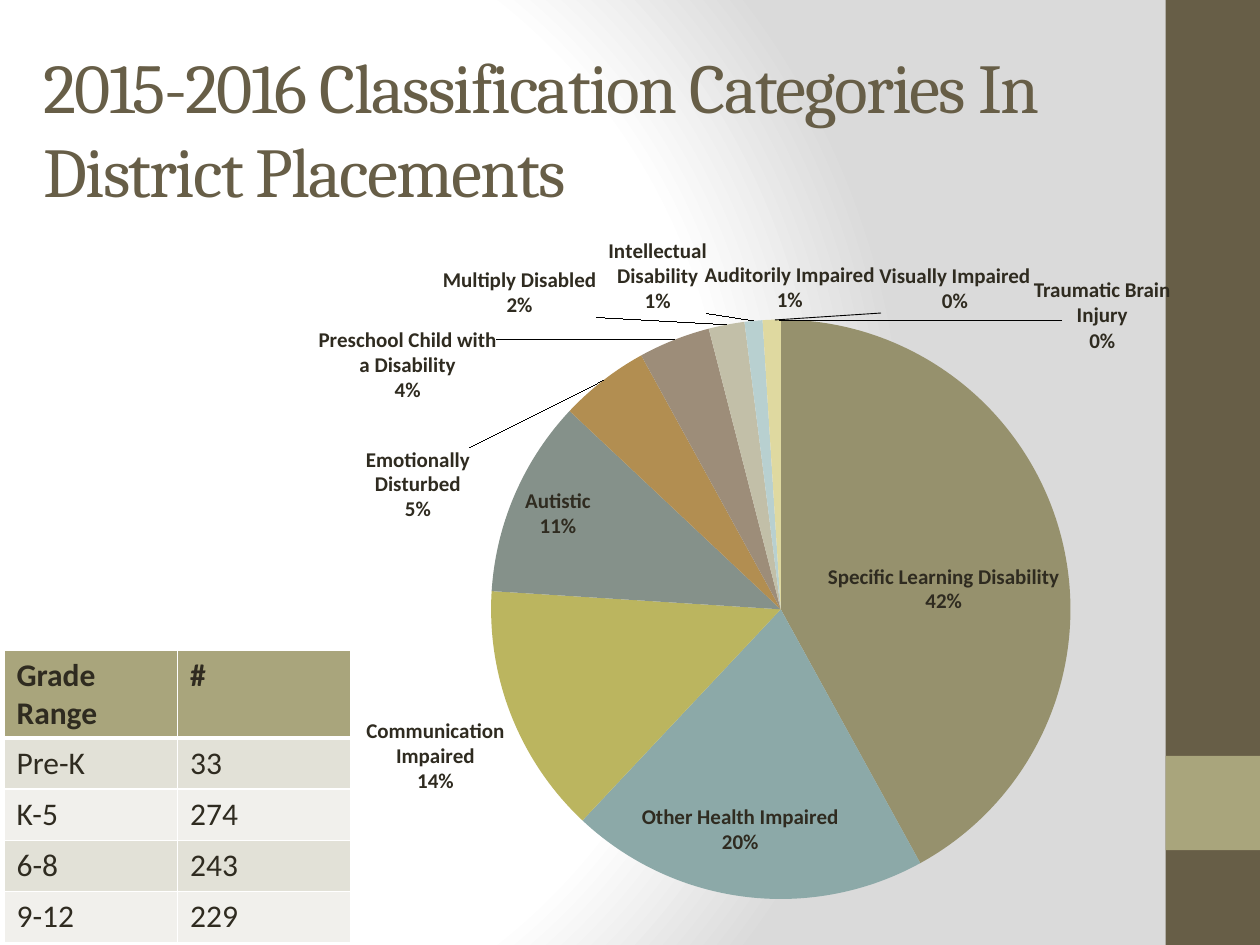
from pptx import Presentation
from pptx.chart.data import CategoryChartData
from pptx.dml.color import RGBColor
from pptx.enum.chart import XL_CHART_TYPE as ChartType
from pptx.enum.shapes import MSO_CONNECTOR as Connector, MSO_SHAPE as Shape
from pptx.enum.text import MSO_ANCHOR as Anchor, PP_ALIGN as Align
from pptx.oxml import parse_xml
from pptx.oxml.ns import nsdecls, qn
from pptx.util import Cm, Pt

BROWN = RGBColor(0x67, 0x5E, 0x47)
SAGE = RGBColor(0xA9, 0xA5, 0x7C)
INK = RGBColor(0x2F, 0x2B, 0x20)
BLACK = RGBColor(0, 0, 0)
BAND_DARK = RGBColor(0xE2, 0xE1, 0xD7)
BAND_LIGHT = RGBColor(0xF1, 0xF0, 0xEC)
SLICE_COLOURS = [RGBColor.from_string(code) for code in (
    "96916D", "8CA9A8", "BBB55F", "85918A", "B28E51", "9D8D79",
    "C2BFA8", "B8D0D0", "DFD9A0", "B4BEBA", "D8BE96")]

# category, percent, label shift as a share of the chart
CLASSIFICATIONS = [
    ("Specific Learning Disability", 42, None),
    ("Other Health Impaired", 20, None),
    ("Communication Impaired", 14, None),
    ("Autistic", 11, None),
    ("Emotionally Disturbed", 5, (-0.14, 0.19)),
    ("Preschool Child with a Disability", 4, (-0.19, 0.09)),
    ("Multiply Disabled", 2, (-0.14, 0)),
    ("Intellectual Disability", 1, (-0.05, 0)),
    ("Auditorily Impaired", 1, (0.02, 0)),
    ("Visually Impaired", 0, None),
    ("Traumatic Brain Injury", 0, None),
]
NARROW_LABEL = "Preschool Child with a Disability"
# Slices of no width get no chart label: left, top, width, height, leader from and to
EMPTY_SLICE_LABELS = {
    "Visually Impaired": (17.6, 5.28, 3.3, 1.02, (17.76, 6.31), (15.62, 6.45)),
    "Traumatic Brain Injury": (20.77, 5.58, 2.9, 1.52, (21.41, 6.46), (15.7, 6.46)),
}
GRADES = [("Grade Range", "#"), ("Pre-K", "33"), ("K-5", "274"),
          ("6-8", "243"), ("9-12", "229")]


def style_font(font, **values):
    font.color.rgb = values.pop("color")
    for name, value in values.items():
        setattr(font, name, value)


prs = Presentation()
prs.slide_width, prs.slide_height = Cm(25.4), Cm(19.05)
slide = prs.slides.add_slide(prs.slide_layouts[6])

# Background
slide.background.fill.gradient()
gradient = slide.background._cSld.find(".//" + qn("a:gradFill"))
stops = "".join(
    f'<a:gs pos="{pos}"><a:srgbClr val="{colour}"/></a:gs>'
    for pos, colour in ((0, "FFFFFF"), (75000, "FFFFFF"), (100000, "DADADA")))
gradient.getparent().replace(gradient, parse_xml(
    f'<a:gradFill {nsdecls("a")} rotWithShape="1"><a:gsLst>{stops}</a:gsLst>'
    '<a:path path="circle"><a:fillToRect l="20000" t="50000" r="100000" b="50000"/>'
    '</a:path></a:gradFill>'))

# Side band
for top, height, colour in ((0, 19.05, BROWN), (15.24, 1.9, SAGE)):
    band = slide.shapes.add_shape(Shape.RECTANGLE, Cm(23.5), Cm(top), Cm(1.9), Cm(height))
    band.shadow.inherit = False
    band.fill.solid()
    band.fill.fore_color.rgb = colour
    band.line.fill.background()

# Title
title = slide.shapes.add_textbox(Cm(0.63), Cm(0.76), Cm(22.02), Cm(2.54)).text_frame
title.word_wrap = True
title.vertical_anchor = Anchor.TOP
heading = title.paragraphs[0].add_run()
heading.text = "2015-2016 Classification Categories In District Placements"
style_font(heading.font, name="Cambria", size=Pt(40), color=BROWN)
heading.font._element.set("spc", "-100")

# Grade table
grade_table = slide.shapes.add_table(
    len(GRADES), 2, Cm(0.08), Cm(13.1), Cm(7), Cm(5.89)).table
for column in grade_table.columns:
    column.width = Cm(3.5)
for row_no, entries in enumerate(GRADES):
    is_header = row_no == 0
    grade_table.rows[row_no].height = Cm(1.77 if is_header else 1.03)
    for col_no, entry in enumerate(entries):
        cell = grade_table.cell(row_no, col_no)
        cell.fill.solid()
        cell.fill.fore_color.rgb = (
            SAGE if is_header else BAND_DARK if row_no % 2 else BAND_LIGHT)
        run = cell.text_frame.paragraphs[0].add_run()
        run.text = entry
        style_font(run.font, name="Calibri", size=Pt(18), bold=is_header, color=INK)
        for index, side in enumerate(("lnL", "lnR", "lnT", "lnB")):
            thick = (is_header and side == "lnB") or (row_no == 1 and side == "lnT")
            cell._tc.get_or_add_tcPr().insert(index, parse_xml(
                f'<a:{side} {nsdecls("a")} w="{Pt(3 if thick else 1)}"><a:solidFill>'
                f'<a:srgbClr val="FFFFFF"/></a:solidFill></a:{side}>'))

# Pie chart
pie_data = CategoryChartData(number_format="0")
pie_data.categories = [name for name, *_ in CLASSIFICATIONS]
pie_data.add_series("Series 1", [percent for _, percent, _ in CLASSIFICATIONS])
chart = slide.shapes.add_chart(
    ChartType.PIE, Cm(5.08), Cm(4.45), Cm(18.54), Cm(15.67), pie_data).chart
chart.has_legend = False
chart.has_title = False
style_font(chart.font, name="Calibri", size=Pt(12), bold=True, color=INK)
pie = chart.plots[0]
pie.vary_by_categories = True
shares = pie.series[0]
for index, colour in enumerate(SLICE_COLOURS):
    slice_format = shares.points[index].format
    slice_format.fill.solid()
    slice_format.fill.fore_color.rgb = colour
    slice_format.line.fill.background()

plot_area = chart._chartSpace.find(".//" + qn("c:plotArea"))
for old_layout in plot_area.findall(qn("c:layout")):
    plot_area.remove(old_layout)
plot_area.insert(0, parse_xml(
    f'<c:layout {nsdecls("c")}><c:manualLayout><c:layoutTarget val="inner"/>'
    '<c:xMode val="edge"/><c:yMode val="edge"/><c:x val="0.26"/><c:y val="0.12"/>'
    '<c:w val="0.63"/><c:h val="0.76"/></c:manualLayout></c:layout>'))

# Slice labels
number_format = '<c:numFmt formatCode="0%" sourceLinked="0"/><c:spPr><a:noFill/></c:spPr>'
label_font = (
    f'<c:txPr><a:bodyPr/><a:p><a:pPr><a:defRPr sz="1200" b="1"><a:solidFill>'
    f'<a:srgbClr val="{INK}"/></a:solidFill><a:latin typeface="Calibri"/>'
    '</a:defRPr></a:pPr><a:endParaRPr lang="en-US"/></a:p></c:txPr>')
shown = "".join(f'<c:{flag} val="{value}"/>' for flag, value in (
    ("showLegendKey", 0), ("showVal", 0), ("showCatName", 1),
    ("showSerName", 0), ("showPercent", 1), ("showBubbleSize", 0)))
separator = "<c:separator>\n</c:separator>"
label_size = (
    '<c:extLst><c:ext uri="{CE6537A1-D6FC-4f65-9D91-7224C49458BB}" '
    'xmlns:c15="http://schemas.microsoft.com/office/drawing/2012/chart"><c15:layout>'
    '<c:manualLayout><c:w val="0.16"/><c:h val="0.1"/></c:manualLayout>'
    '</c15:layout></c:ext></c:extLst>')
slice_labels = ""
for index, (category, _, shift) in enumerate(CLASSIFICATIONS):
    if category in EMPTY_SLICE_LABELS:
        slice_labels += f'<c:dLbl><c:idx val="{index}"/><c:delete val="1"/></c:dLbl>'
        continue
    layout = "" if shift is None else (
        f'<c:layout><c:manualLayout><c:x val="{shift[0]}"/><c:y val="{shift[1]}"/>'
        '</c:manualLayout></c:layout>')
    position = "outEnd" if shift else "bestFit"
    slice_labels += (
        f'<c:dLbl><c:idx val="{index}"/>{layout}{number_format}{label_font}'
        f'<c:dLblPos val="{position}"/>{shown}{separator}'
        f'{label_size if category == NARROW_LABEL else ""}</c:dLbl>')
shares._element.find(qn("c:cat")).addprevious(parse_xml(
    f'<c:dLbls {nsdecls("c", "a")}>{slice_labels}{number_format}{label_font}'
    f'<c:dLblPos val="bestFit"/>{shown}{separator}<c:showLeaderLines val="1"/></c:dLbls>'))

# Labels and leader lines of the empty slices
for category, (left, top, width, height, start, end) in EMPTY_SLICE_LABELS.items():
    label = slide.shapes.add_textbox(Cm(left), Cm(top), Cm(width), Cm(height)).text_frame
    label.word_wrap = True
    label.vertical_anchor = Anchor.MIDDLE
    for side in ("left", "right", "top", "bottom"):
        setattr(label, f"margin_{side}", 0)
    for paragraph, text in ((label.paragraphs[0], category), (label.add_paragraph(), "0%")):
        paragraph.alignment = Align.CENTER
        run = paragraph.add_run()
        run.text = text
        style_font(run.font, name="Calibri", size=Pt(12), bold=True, color=INK)
    leader = slide.shapes.add_connector(Connector.STRAIGHT, *map(Cm, start + end))
    leader.line.color.rgb = BLACK
    leader.line.width = Pt(0.5)
    leader._element.spPr.append(parse_xml(f'<a:effectLst {nsdecls("a")}/>'))

prs.save("out.pptx")
